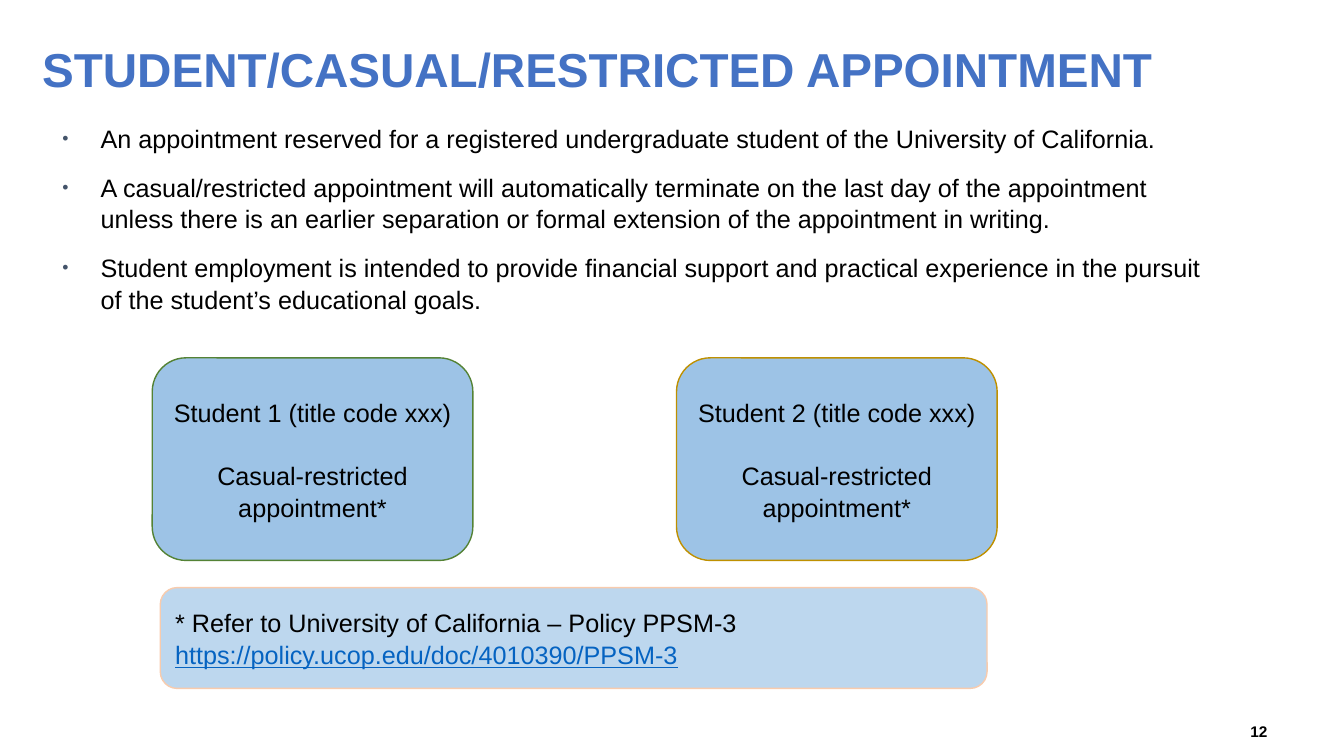
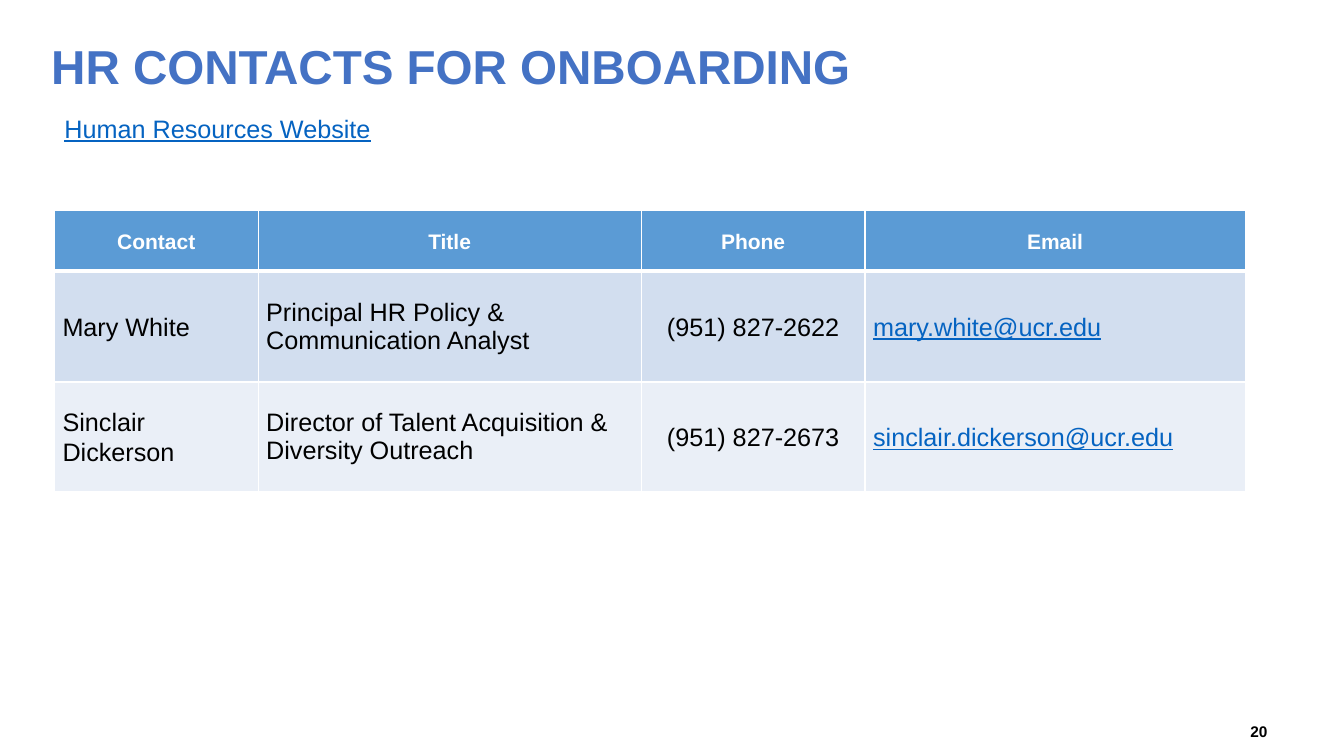
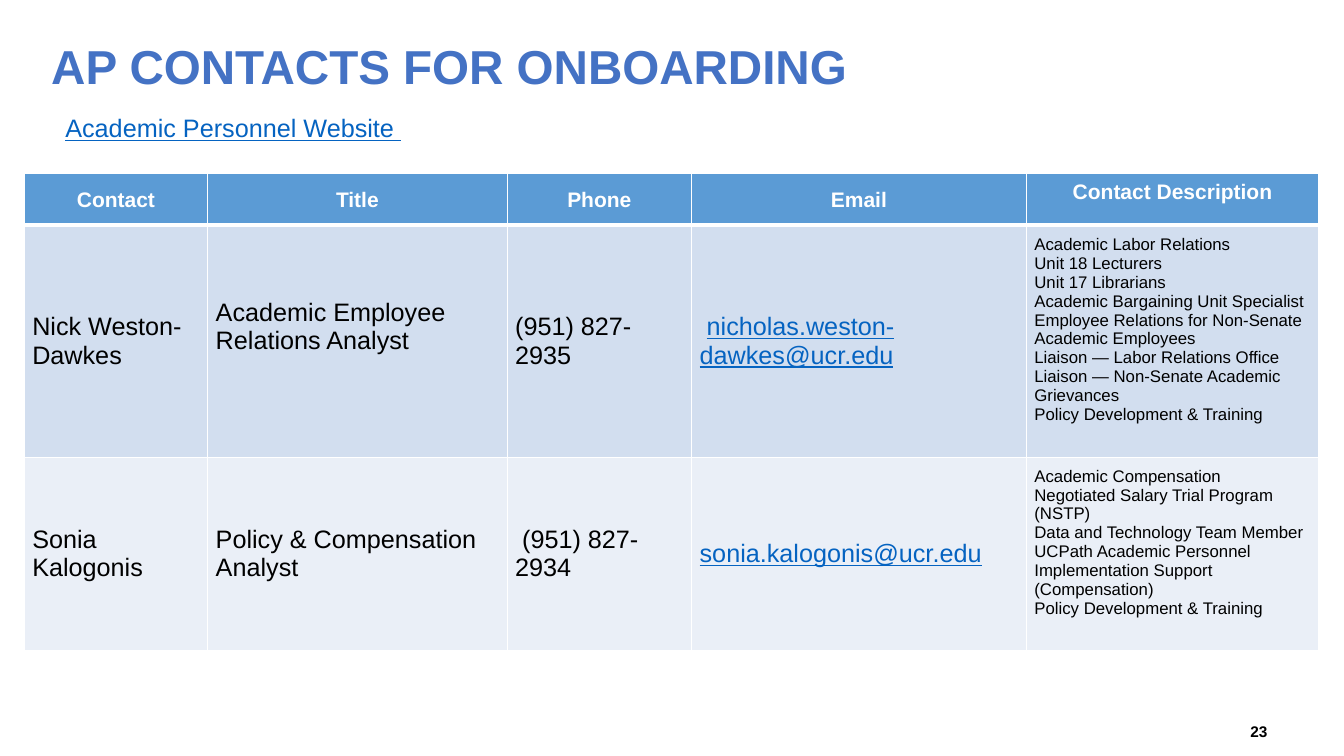
from dataclasses import dataclass
from typing import Any, Sequence, Union

import lxml.etree
import pptx
import pptx.dml.color
import pptx.enum.shapes
import pptx.enum.text
import pptx.oxml.ns
import pptx.util

PX = 9144  # EMU per px, 100 px to the inch
SLIDE_WIDTH, SLIDE_HEIGHT = 1333, 750

ALIGN = pptx.enum.text.PP_ALIGN
ANCHOR = pptx.enum.text.MSO_ANCHOR


@dataclass(frozen=True)
class Theme:
    font: str = "Arial"
    title: str = "4472C4"
    text: str = "000000"
    link: str = "0563C1"
    bullet: str = "44546A"
    white: str = "FFFFFF"
    header: str = "5B9BD5"
    bands: tuple[str, str] = ("D2DEEF", "EAEFF7")
    student_fill: str = "9DC3E6"
    student_lines: tuple[str, str] = ("548235", "BF9000")
    note_fill: str = "BDD7EE"
    note_line: str = "F8CBAD"
    title_size: int = 34
    body_size: int = 18
    header_size: int = 15
    detail_size: int = 12
    number_size: int = 11
    loose: float = 1.05
    table_loose: float = 1.07


THEME = Theme()


@dataclass(frozen=True)
class Box:
    left: int
    top: int
    width: int
    height: int

    def emu(self) -> tuple[int, ...]:
        return tuple(value * PX for value in (self.left, self.top, self.width, self.height))


@dataclass(frozen=True)
class Run:
    text: str
    link: bool = False


Line = Union[str, Run, tuple[Run, ...]]


@dataclass(frozen=True)
class Cell:
    lines: tuple[Line, ...]
    size: int = THEME.body_size
    bottom: int = 4


@dataclass(frozen=True)
class Column:
    heading: str
    width: int
    align: Any = ALIGN.LEFT
    spacing: float = 1.0
    heading_bottom: int = 4


@dataclass(frozen=True)
class ContactPage:
    title: str
    website: str
    website_box: Box
    table_left: int
    table_top: int
    columns: tuple[Column, ...]
    row_heights: tuple[int, ...]
    rows: tuple[tuple[Cell, ...], ...]
    number: int


def color(value: str) -> pptx.dml.color.RGBColor:
    return pptx.dml.color.RGBColor.from_string(value)


def add_element(parent: Any, tag: str, **attributes: str) -> Any:
    return lxml.etree.SubElement(parent, pptx.oxml.ns.qn(tag), attributes)


def add_bullet(paragraph: Any, indent: int = 38) -> None:
    properties = paragraph._p.get_or_add_pPr()
    properties.set("marL", str(indent * PX))
    properties.set("indent", str(-indent * PX))
    add_element(add_element(properties, "a:buClr"), "a:srgbClr", val=THEME.bullet)
    add_element(properties, "a:buSzPct", val="70000")
    add_element(properties, "a:buFont", typeface=THEME.font)
    add_element(properties, "a:buChar", char="•")


def write_text(frame: Any, lines: Sequence[Line], *, size: int = THEME.body_size,
               ink: str = THEME.text, bold: bool = False, align: Any = ALIGN.LEFT,
               anchor: Any = ANCHOR.TOP, spacing: float = 1.0, gap: int = 0,
               bullets: bool = False) -> None:
    """Fill a text frame, one paragraph a line; gap is the points between them."""
    frame.word_wrap = True
    frame.vertical_anchor = anchor
    for index, line in enumerate(lines):
        paragraph = frame.add_paragraph() if index else frame.paragraphs[0]
        if bullets:
            add_bullet(paragraph)
        paragraph.alignment = align
        paragraph.line_spacing = spacing
        if index and gap:
            paragraph.space_before = pptx.util.Pt(gap)
        for part in line if isinstance(line, tuple) else (line,):
            piece = part if isinstance(part, Run) else Run(part)
            run = paragraph.add_run()
            run.text = piece.text
            run.font.name = THEME.font
            run.font.size = pptx.util.Pt(size)
            run.font.bold = bold
            run.font.underline = piece.link
            run.font.color.rgb = color(THEME.link if piece.link else ink)


def add_text(slide: Any, box: Box, lines: Sequence[Line], **text_format: Any) -> None:
    write_text(slide.shapes.add_textbox(*box.emu()).text_frame, lines, **text_format)


def add_card(slide: Any, box: Box, fill: str, line: str, lines: Sequence[Line],
             **text_format: Any) -> None:
    shape = slide.shapes.add_shape(
        pptx.enum.shapes.MSO_SHAPE.ROUNDED_RECTANGLE, *box.emu())
    shape.shadow.inherit = False
    shape.fill.solid()
    shape.fill.fore_color.rgb = color(fill)
    shape.line.color.rgb = color(line)
    shape.line.width = pptx.util.Pt(1)
    write_text(shape.text_frame, lines, anchor=ANCHOR.MIDDLE,
               spacing=THEME.loose, **text_format)


def add_page(presentation: Any, title: str, box: Box, number: int,
             **title_format: Any) -> Any:
    """Add a blank slide with the shared title and page number."""
    slide = presentation.slides.add_slide(presentation.slide_layouts[6])
    add_text(slide, box, [title], size=THEME.title_size, ink=THEME.title,
             bold=True, **title_format)
    add_text(slide, Box(956, 709, 311, 33), [str(number)], size=THEME.number_size,
             bold=True, align=ALIGN.RIGHT, anchor=ANCHOR.MIDDLE)
    return slide


# Contact tables

def style_cell(cell: Any, fill: str, top: int, bottom: int, bottom_margin: int) -> None:
    """Set white borders (widths in points), then the fill and the margins."""
    properties = cell._tc.get_or_add_tcPr()
    for side, width in (("L", 1), ("R", 1), ("T", top), ("B", bottom)):
        border = add_element(properties, f"a:ln{side}", w=str(int(pptx.util.Pt(width))))
        add_element(add_element(border, "a:solidFill"), "a:srgbClr", val=THEME.white)
    cell.fill.solid()
    cell.fill.fore_color.rgb = color(fill)
    cell.margin_left = cell.margin_right = 8 * PX
    cell.margin_top = 4 * PX
    cell.margin_bottom = bottom_margin * PX
    cell.vertical_anchor = ANCHOR.MIDDLE


def add_contact_table(slide: Any, page: ContactPage) -> None:
    box = Box(page.table_left, page.table_top,
              sum(column.width for column in page.columns), sum(page.row_heights))
    table = slide.shapes.add_table(
        len(page.row_heights), len(page.columns), *box.emu()).table
    table.horz_banding = False
    for row, height in zip(table.rows, page.row_heights):
        row.height = height * PX
    for position, column in enumerate(page.columns):
        table.columns[position].width = column.width * PX
        heading = table.cell(0, position)
        style_cell(heading, THEME.header, 1, 3, column.heading_bottom)
        write_text(heading.text_frame, [column.heading], size=THEME.header_size,
                   ink=THEME.white, bold=True, align=ALIGN.CENTER,
                   anchor=ANCHOR.MIDDLE, spacing=THEME.table_loose)
        for index, contact in enumerate(page.rows):
            content = contact[position]
            cell = table.cell(index + 1, position)
            style_cell(cell, THEME.bands[index % 2], 1 if index else 3, 1, content.bottom)
            write_text(cell.text_frame, content.lines, size=content.size,
                       align=column.align, anchor=ANCHOR.MIDDLE, spacing=column.spacing)


def build_contacts(presentation: Any, page: ContactPage) -> None:
    slide = add_page(presentation, page.title, Box(41, 32, 1234, 75), page.number)
    add_text(slide, page.website_box, [Run(page.website, link=True)])
    add_contact_table(slide, page)


def plain(text: str, bottom: int = 4) -> Cell:
    return Cell((text,), bottom=bottom)


def email(address: str) -> Cell:
    return Cell((Run(address, link=True),))


def duties(*lines: str) -> Cell:
    return Cell(lines, size=THEME.detail_size, bottom=27)


HR_CONTACTS = ContactPage(
    title="HR CONTACTS FOR ONBOARDING",
    website="Human Resources Website",
    website_box=Box(54, 107, 1089, 71),
    table_left=54,
    table_top=209,
    columns=(
        Column("Contact", 202, spacing=THEME.table_loose),
        Column("Title", 380),
        Column("Phone", 222, align=ALIGN.CENTER, spacing=THEME.table_loose),
        Column("Email", 377, spacing=THEME.table_loose),
    ),
    row_heights=(60, 110, 109),
    rows=(
        (plain("Mary White"), plain("Principal HR Policy & Communication Analyst"),
         plain("(951) 827-2622"), email("mary.white@ucr.edu")),
        (plain("Sinclair Dickerson"),
         plain("Director of Talent Acquisition & Diversity Outreach"),
         plain("(951) 827-2673"), email("sinclair.dickerson@ucr.edu")),
    ),
    number=20,
)

AP_CONTACTS = ContactPage(
    title="AP CONTACTS FOR ONBOARDING",
    website="Academic Personnel Website ",
    website_box=Box(55, 107, 1210, 40),
    table_left=24,
    table_top=172,
    columns=(
        Column("Contact", 182),
        Column("Title", 297),
        Column("Phone", 183),
        Column("Email", 332),
        Column("Contact Description", 290, heading_bottom=20),
    ),
    row_heights=(51, 229, 190),
    rows=(
        (plain("Nick Weston-Dawkes"),
         plain("Academic Employee Relations Analyst", bottom=32),
         plain("(951) 827-2935"),
         Cell(((Run(" "), Run("nicholas.weston-dawkes@ucr.edu", link=True)),)),
         duties("Academic Labor Relations", "Unit 18 Lecturers", "Unit 17 Librarians",
                "Academic Bargaining Unit Specialist",
                "Employee Relations for Non-Senate Academic Employees",
                "Liaison — Labor Relations Office",
                "Liaison — Non-Senate Academic Grievances",
                "Policy Development & Training")),
        (plain("Sonia Kalogonis"), plain("Policy & Compensation Analyst"),
         plain(" (951) 827-2934"), email("sonia.kalogonis@ucr.edu"),
         duties("Academic Compensation", "Negotiated Salary Trial Program (NSTP)",
                "Data and Technology Team Member",
                "UCPath Academic Personnel Implementation Support (Compensation)",
                "Policy Development & Training")),
    ),
    number=23,
)


# Student appointments

APPOINTMENT_RULES = (
    "An appointment reserved for a registered undergraduate student of the "
    "University of California.",
    "A casual/restricted appointment will automatically terminate on the last day of "
    "the appointment unless there is an earlier separation or formal extension of the "
    "appointment in writing.",
    "Student employment is intended to provide financial support and practical "
    "experience in the pursuit of the student’s educational goals.",
)


def build_appointment(presentation: Any) -> None:
    slide = add_page(presentation, "STUDENT/CASUAL/RESTRICTED APPOINTMENT",
                     Box(32, 27, 1301, 90), 12, anchor=ANCHOR.MIDDLE, spacing=0.9)
    add_text(slide, Box(52, 116, 1150, 278), APPOINTMENT_RULES, bullets=True, gap=12,
             spacing=THEME.loose)
    for index, line in enumerate(THEME.student_lines):
        add_card(slide, Box(151 + 520 * index, 355, 318, 201), THEME.student_fill, line,
                 [f"Student {index + 1} (title code xxx)",
                  "Casual-restricted appointment*"],
                 align=ALIGN.CENTER, gap=22)
    add_card(slide, Box(159, 583, 820, 100), THEME.note_fill, THEME.note_line,
             ["* Refer to University of California – Policy PPSM-3",
              Run("https://policy.ucop.edu/doc/4010390/PPSM-3", link=True)])


def main() -> None:
    presentation = pptx.Presentation()
    presentation.slide_width = SLIDE_WIDTH * PX
    presentation.slide_height = SLIDE_HEIGHT * PX
    build_appointment(presentation)
    for page in (HR_CONTACTS, AP_CONTACTS):
        build_contacts(presentation, page)
    presentation.save("out.pptx")


if __name__ == "__main__":
    main()
